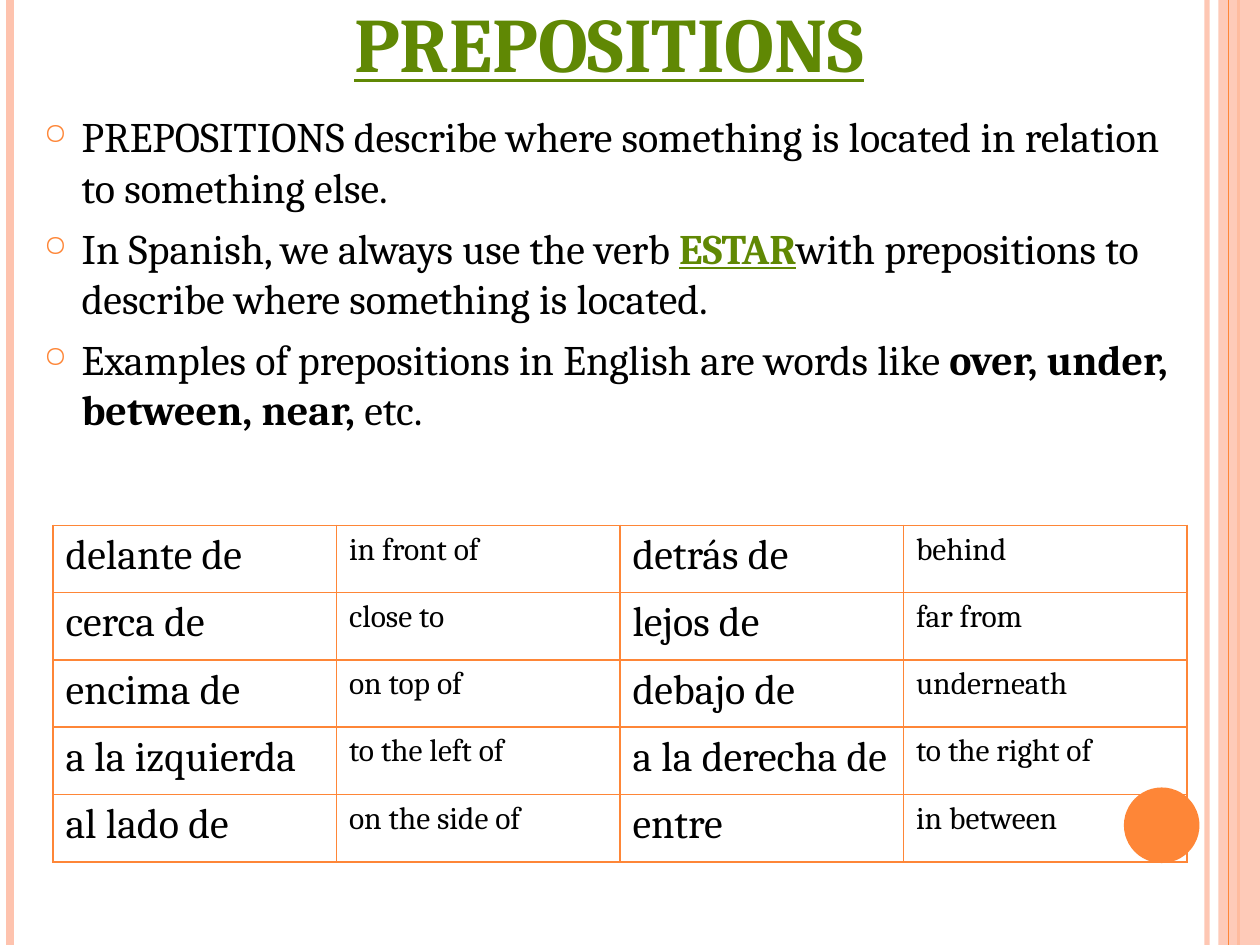
from dataclasses import dataclass

from lxml.etree import SubElement
from pptx import Presentation
from pptx.dml.color import RGBColor
from pptx.enum.shapes import MSO_CONNECTOR, MSO_SHAPE
from pptx.enum.text import MSO_ANCHOR, PP_ALIGN
from pptx.oxml.ns import qn
from pptx.util import Inches, Pt


@dataclass(frozen=True)
class Theme:
    font: str = "Cambria"
    ink: str = "000000"
    green: str = "608804"
    orange: str = "FE8637"
    peach: str = "FEC3AE"
    title: int = 44
    body: int = 24
    small: int = 18


THEME = Theme()

# x, colour, width in points, opacity in percent
RULES = [
    (9.58, THEME.peach, 3, 93),
    (0.08, THEME.peach, 4.5, 100),
    (9.83, THEME.orange, 1.5, 100),
]
EDGE = (9.75, THEME.orange, 0.75, 100)

KEY = {"bold": True, "underline": True, "color": THEME.green}
BOLD = {"bold": True}
POINTS = [
    [("PREPOSITIONS describe where something is located in relation "
      "to something else.", {})],
    [("In Spanish, we always use the verb ", {}),
     ("ESTAR", KEY),
     ("with prepositions to describe where something is located.", {})],
    [("Examples of prepositions in English are words like ", {}),
     ("over, under, between, near, ", BOLD),
     ("etc.", {})],
]

WORDS = [
    ("delante de", "in front of", "detrás de", "behind"),
    ("cerca de", "close to", "lejos de", "far from"),
    ("encima de", "on top of", "debajo de", "underneath"),
    ("a la izquierda", "to the left of", "a la derecha de", "to the right of"),
    ("al lado de", "on the side of", "entre", "in between"),
]


def place(shape, box):
    for name, value in zip(("left", "top", "width", "height"), box):
        setattr(shape, name, Inches(value))


def write(para, text, size, color=THEME.ink, **style):
    run = para.add_run()
    run.text = text
    look = {"name": THEME.font, "size": Pt(size), "bold": False,
            "underline": False, **style}
    for name, value in look.items():
        setattr(run.font, name, value)
    run.font.color.rgb = RGBColor.from_string(color)


def fade(color, alpha):
    """Set the opacity of a solid fill's colour element."""
    if alpha < 100:
        SubElement(color, qn("a:alpha"), val=str(alpha * 1000))


def add_rule(slide, x, color, width, alpha):
    rule = slide.shapes.add_connector(
        MSO_CONNECTOR.STRAIGHT, Inches(x), 0, Inches(x), Inches(7.5))
    rule.line.color.rgb = RGBColor.from_string(color)
    rule.line.width = Pt(width)
    props = rule._element.spPr
    fade(props.find(".//" + qn("a:srgbClr")), alpha)
    SubElement(props, qn("a:effectLst"))


def add_solid(slide, kind, box, color, alpha=100):
    shape = slide.shapes.add_shape(kind, *map(Inches, box))
    shape.shadow.inherit = False
    shape.fill.solid()
    shape.fill.fore_color.rgb = RGBColor.from_string(color)
    shape.line.fill.background()
    fade(shape._element.spPr.find(".//" + qn("a:srgbClr")), alpha)


def add_frame(slide):
    for rule in RULES:
        add_rule(slide, *rule)
    add_solid(slide, MSO_SHAPE.RECTANGLE, (9.67, 0, 0.33, 7.5), THEME.peach, 87)
    add_rule(slide, *EDGE)
    add_solid(slide, MSO_SHAPE.OVAL, (8.92, 6.25, 0.6, 0.6), THEME.orange)


def add_title(slide, box, text):
    title = slide.shapes.title
    place(title, box)
    title.text_frame.vertical_anchor = MSO_ANCHOR.BOTTOM
    para = title.text_frame.paragraphs[0]
    para.alignment = PP_ALIGN.CENTER
    write(para, text, THEME.title, **KEY)


def add_bullet(para):
    props = para._p.get_or_add_pPr()
    props.set("marL", str(Inches(0.3)))
    props.set("indent", str(-Inches(0.3)))
    color = SubElement(props, qn("a:buClr"))
    SubElement(color, qn("a:srgbClr"), val=THEME.orange)
    SubElement(props, qn("a:buSzPct"), val="70000")
    SubElement(props, qn("a:buChar"), char="○")


def add_points(slide, box, points):
    frame = slide.shapes.add_textbox(*map(Inches, box)).text_frame
    frame.word_wrap = True
    for i, runs in enumerate(points):
        para = frame.add_paragraph() if i else frame.paragraphs[0]
        para.space_before = Pt(6)
        add_bullet(para)
        for text, style in runs:
            write(para, text, THEME.body, **style)


def add_border(cell):
    props = cell._tc.get_or_add_tcPr()
    for side in ("lnL", "lnR", "lnT", "lnB"):
        line = SubElement(props, qn("a:" + side), w=str(Pt(1)))
        fill = SubElement(line, qn("a:solidFill"))
        SubElement(fill, qn("a:srgbClr"), val=THEME.orange)


def add_words(slide, box, words):
    table = slide.shapes.add_table(
        len(words), len(words[0]), *map(Inches, box)).table
    table.first_row = table.horz_banding = False
    for r, row in enumerate(words):
        for c, text in enumerate(row):
            cell = table.cell(r, c)
            add_border(cell)
            cell.fill.background()
            # Spanish columns are larger than their English meanings
            size = THEME.small if c % 2 else THEME.body
            write(cell.text_frame.paragraphs[0], text, size)


def main():
    deck = Presentation()
    deck.slide_width, deck.slide_height = Inches(10), Inches(7.5)
    slide = deck.slides.add_slide(deck.slide_layouts[5])
    add_frame(slide)
    add_title(slide, (0.75, -0.5, 8.17, 1.25), "PREPOSITIONS")
    add_points(slide, (0.25, 0.83, 9.17, 3.92), POINTS)
    add_words(slide, (0.42, 4.17, 9, 2.67), WORDS)
    deck.save("out.pptx")


if __name__ == "__main__":
    main()
